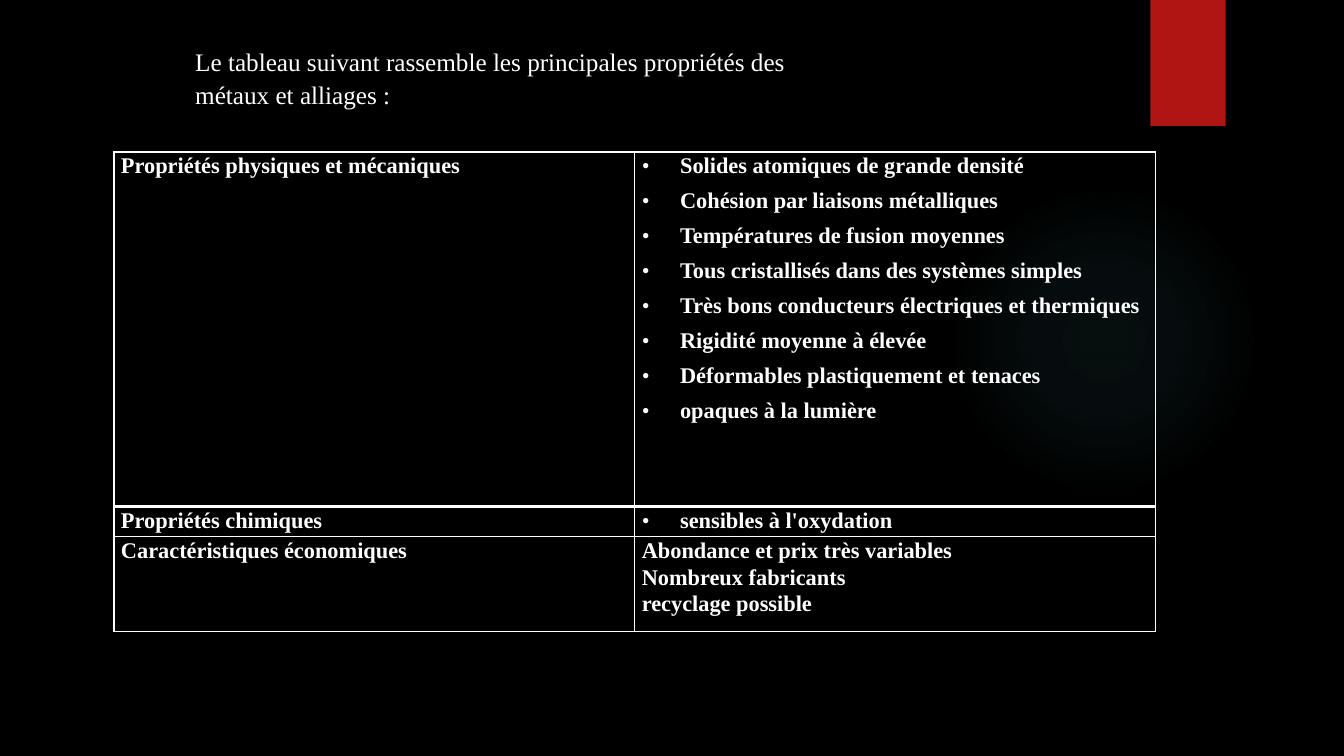
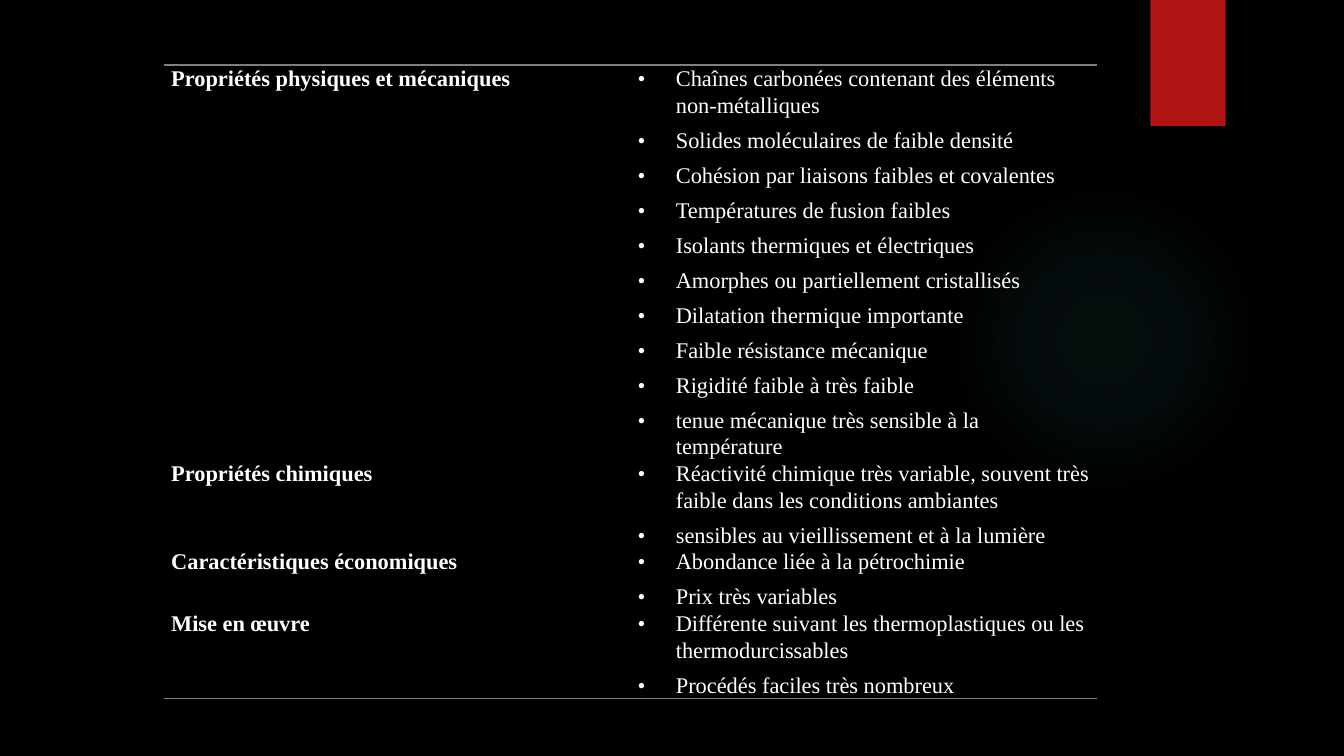
"""Build two slides that tabulate the properties of metals and of polymers."""
from lxml import etree
from pptx import Presentation
from pptx import oxml
from pptx import util as u
from pptx.dml import color
from pptx.enum import shapes, text
from pptx.oxml import ns

COLORS = {"background": "000000", "text": "FFFFFF", "band": "B01513",
          "glow": "50B9C1", "rule": "7F7F7F"}
SLIDE_WIDTH, SLIDE_HEIGHT = u.Inches(13.33), u.Inches(7.5)
TITLE_ONLY, BLANK = 5, 6
NO_GRID_STYLE = "{2D5ABB26-0587-4C30-8999-92F81FD0307C}"
GLOW_STOPS = ((0, 7), (36, 6), (69, 0))

FONT = {"name": "Times New Roman", "size": u.Pt(16), "bold": False}
BOLD = {**FONT, "bold": True}
TITLE_FONT = {**FONT, "size": u.Pt(18)}
PARAGRAPH = {"alignment": text.PP_ALIGN.LEFT, "line_spacing": 1.07}
TITLE_FRAME = {"word_wrap": True, "auto_size": text.MSO_AUTO_SIZE.NONE,
               "vertical_anchor": text.MSO_ANCHOR.TOP,
               "margin_left": u.Inches(0.27), "margin_right": u.Inches(0.1),
               "margin_top": u.Inches(0.05), "margin_bottom": u.Inches(0.05)}
CELL = {"margin_left": u.Inches(0.07), "margin_right": u.Inches(0.07),
        "margin_top": 0, "margin_bottom": 0,
        "vertical_anchor": text.MSO_ANCHOR.TOP}
TABLE = {"first_row": False, "horz_banding": False}

INTRODUCTION = ("Le tableau suivant rassemble les principales propriétés "
                "des métaux et alliages :")
METALS = (
    ("Propriétés physiques et mécaniques", True, (
        "Solides atomiques de grande densité",
        "Cohésion par liaisons métalliques",
        "Températures de fusion moyennes",
        "Tous cristallisés dans des systèmes simples",
        "Très bons conducteurs électriques et thermiques",
        "Rigidité moyenne à élevée",
        "Déformables plastiquement et tenaces",
        "opaques à la lumière")),
    ("Propriétés chimiques", True, ("sensibles à l'oxydation",)),
    ("Caractéristiques économiques", False, (
        "Abondance et prix très variables",
        "Nombreux fabricants",
        "recyclage possible")),
)
POLYMERS = (
    ("Propriétés physiques et mécaniques", True, (
        "Chaînes carbonées contenant des éléments non-métalliques",
        "Solides moléculaires de faible densité",
        "Cohésion par liaisons faibles et covalentes",
        "Températures de fusion faibles",
        "Isolants thermiques et électriques",
        "Amorphes ou partiellement cristallisés",
        "Dilatation thermique importante",
        "Faible résistance mécanique",
        "Rigidité faible à très faible",
        "tenue mécanique très sensible à la température")),
    ("Propriétés chimiques", True, (
        "Réactivité chimique très variable, souvent très faible "
        "dans les conditions ambiantes",
        "sensibles au vieillissement et à la lumière")),
    ("Caractéristiques économiques", True, (
        "Abondance liée à la pétrochimie",
        "Prix très variables")),
    ("Mise en œuvre", True, (
        "Différente suivant les thermoplastiques ou les thermodurcissables",
        "Procédés faciles très nombreux")),
)


def across(percent):
    """Return a share of the slide width."""
    return u.Emu(round(SLIDE_WIDTH * percent / 100))


def down(percent):
    """Return a share of the slide height."""
    return u.Emu(round(SLIDE_HEIGHT * percent / 100))


def area(left, top, width, height):
    """Turn percentages into a left, top, width and height."""
    return across(left), down(top), across(width), down(height)


def rgb(name):
    """Look up a named colour."""
    return color.RGBColor.from_string(COLORS[name])


def apply_format(target, values):
    """Set each attribute of the target from a dict."""
    for name, value in values.items():
        setattr(target, name, value)


def add_element(parent, tag, **attributes):
    """Append a drawing element and return it."""
    values = {name: str(value) for name, value in attributes.items()}
    return etree.SubElement(parent, ns.qn(tag), values)


def add_bullet(paragraph):
    """Give the paragraph a hanging bullet and a tab stop."""
    properties = paragraph._p.get_or_add_pPr()
    indent = u.Inches(0.38)
    properties.set("marL", str(indent))
    properties.set("indent", str(-indent))
    add_element(properties, "a:buFont", typeface="Times New Roman")
    add_element(properties, "a:buChar", char="•")
    tabs = add_element(properties, "a:tabLst")
    add_element(tabs, "a:tab", pos=u.Inches(0.5), algn="l")


def write_lines(frame, lines, font, bulleted=False):
    """Write one paragraph per line, spaced apart when bulleted."""
    for index, line in enumerate(lines):
        paragraph = frame.add_paragraph() if index else frame.paragraphs[0]
        if bulleted:
            add_bullet(paragraph)
        apply_format(paragraph, PARAGRAPH)
        paragraph.space_before = u.Pt(6 if bulleted and index else 0)
        run = paragraph.add_run()
        run.text = line
        apply_format(run.font, font)
        run.font.color.rgb = rgb("text")


def add_plain_shape(slide, preset, place):
    """Add a shape without line or shadow."""
    shape = slide.shapes.add_shape(preset, *place)
    shape.shadow.inherit = False
    shape.line.fill.background()
    return shape


def add_glow(slide):
    """Add the faint round glow."""
    shape = add_plain_shape(slide, shapes.MSO_SHAPE.OVAL,
                            area(70.58, 24.4, 23.1, 41.07))
    gradient = oxml.parse_xml(f'<a:gradFill {ns.nsdecls("a")}/>')
    stops = add_element(gradient, "a:gsLst")
    for position, opacity in GLOW_STOPS:
        stop = add_element(stops, "a:gs", pos=position * 1000)
        tint = add_element(stop, "a:srgbClr", val=COLORS["glow"])
        add_element(tint, "a:alpha", val=opacity * 1000)
    circle = add_element(gradient, "a:path", path="circle")
    add_element(circle, "a:fillToRect", l=50000, t=50000, r=50000, b=50000)
    shape._element.spPr.find(ns.qn("a:prstGeom")).addnext(gradient)


def add_band(slide):
    """Add the red band at the top right."""
    shape = add_plain_shape(slide, shapes.MSO_SHAPE.RECTANGLE,
                            area(85.6, 0, 5.6, 16.67))
    shape.fill.solid()
    shape.fill.fore_color.rgb = rgb("band")


def add_decorated_slide(presentation, layout):
    """Add a slide with the shared decoration."""
    slide = presentation.slides.add_slide(presentation.slide_layouts[layout])
    add_glow(slide)
    add_band(slide)
    return slide


def set_title(slide, title):
    """Place and format the title placeholder."""
    shape = slide.shapes.title
    place = area(12.5, 5.2, 50, 10)
    apply_format(shape, dict(zip(("left", "top", "width", "height"), place)))
    apply_format(shape.text_frame, TITLE_FRAME)
    write_lines(shape.text_frame, [title], TITLE_FONT)


def add_border(cell, side, name, points):
    """Draw one side of a cell; zero points leaves it open."""
    if points:
        line = add_element(cell._tc.get_or_add_tcPr(), f"a:ln{side}",
                           w=u.Pt(points))
        fill = add_element(line, "a:solidFill")
        add_element(fill, "a:srgbClr", val=COLORS[name])


def add_property_table(slide, content, left, top, width, heights,
                       rules, rule_color, side_rule, detail_font):
    """Add a two-column table; rules lists line widths from top to bottom."""
    place = area(left, top, width, sum(heights))
    table = slide.shapes.add_table(len(content), 2, *place).table
    apply_format(table, TABLE)
    table._tbl.tblPr.find(ns.qn("a:tableStyleId")).text = NO_GRID_STYLE
    for index, (heading, bulleted, details) in enumerate(content):
        table.rows[index].height = down(heights[index])
        columns = (([heading], BOLD, False), (details, detail_font, bulleted))
        for column, (lines, font, has_bullets) in enumerate(columns):
            cell = table.cell(index, column)
            apply_format(cell, CELL)
            for side, points in zip("LRTB", (side_rule, side_rule,
                                             *rules[index:index + 2])):
                add_border(cell, side, rule_color, points)
            cell.fill.background()
            write_lines(cell.text_frame, lines, font, has_bullets)


def main():
    """Build and save the presentation."""
    presentation = Presentation()
    apply_format(presentation, {"slide_width": SLIDE_WIDTH,
                                "slide_height": SLIDE_HEIGHT})
    background = presentation.slide_master.background.fill
    background.solid()
    background.fore_color.rgb = rgb("background")

    metals = add_decorated_slide(presentation, TITLE_ONLY)
    set_title(metals, INTRODUCTION)
    add_property_table(metals, METALS, 8.48, 20.1, 77.5, (46.9, 4, 12.5),
                       (1, 3, 1, 1), "text", 1, BOLD)

    polymers = add_decorated_slide(presentation, BLANK)
    add_property_table(polymers, POLYMERS, 12.22, 8.6, 69.4,
                       (52.2, 11.6, 8.2, 11.6), (1, 0, 0, 0, 1),
                       "rule", 0, FONT)
    presentation.save("out.pptx")


if __name__ == "__main__":
    main()
